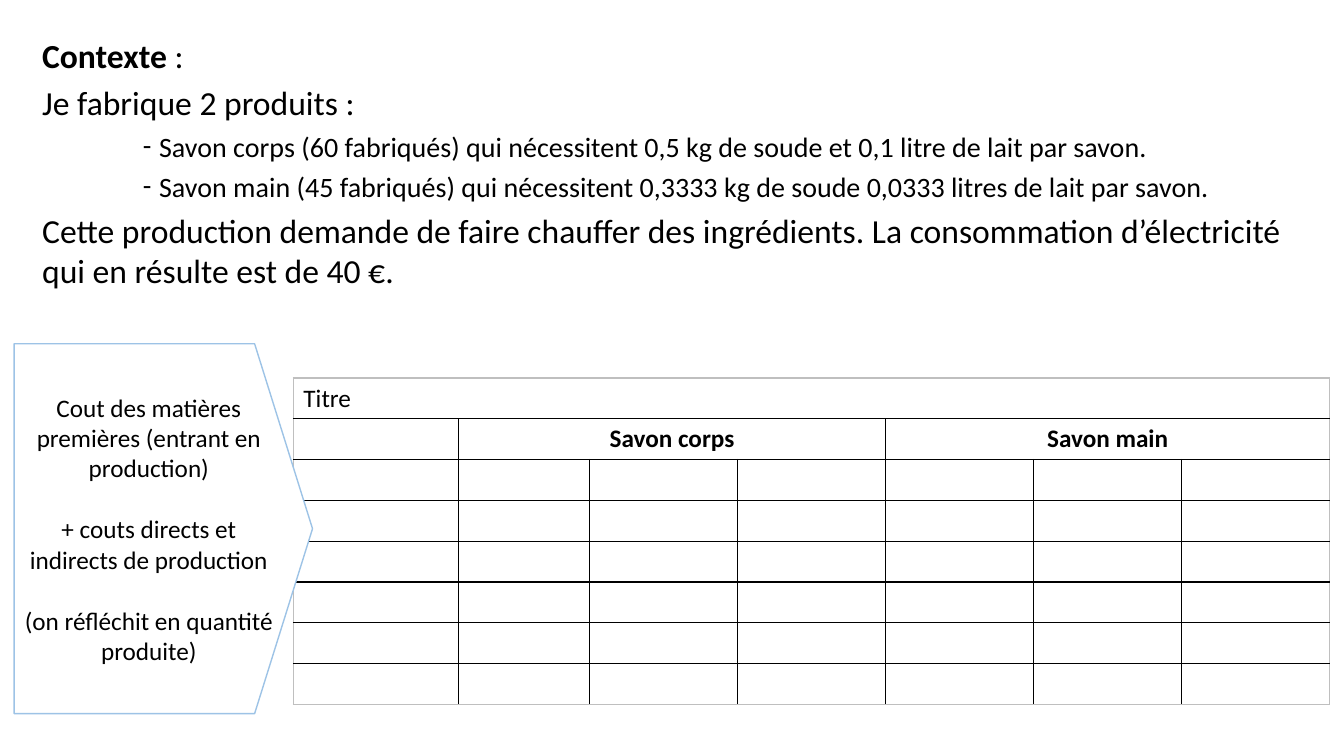
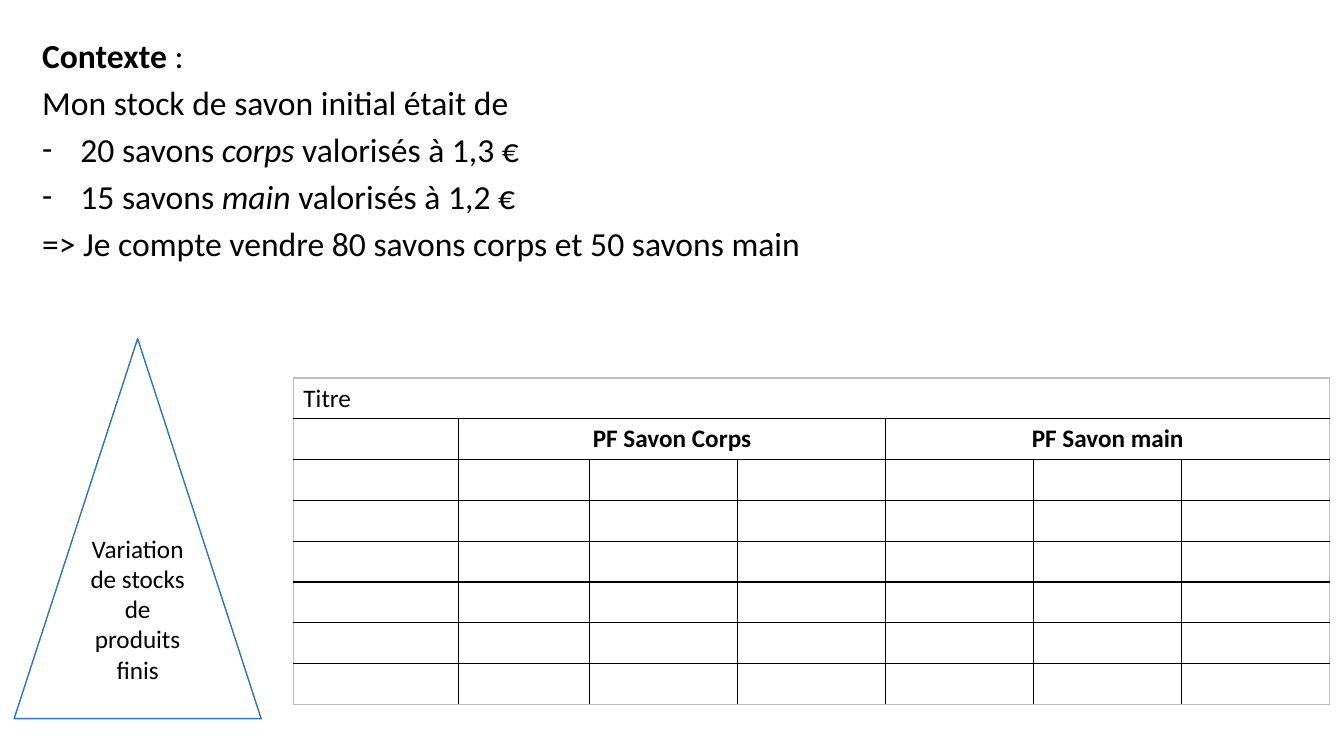
from dataclasses import dataclass

from lxml.etree import SubElement
from pptx import Presentation
from pptx.dml.color import RGBColor
from pptx.enum.shapes import MSO_SHAPE
from pptx.enum.text import MSO_ANCHOR, PP_ALIGN
from pptx.oxml.ns import qn
from pptx.util import Inches, Pt

SLIDE_WIDTH, SLIDE_HEIGHT = Inches(13.33), Inches(7.5)


@dataclass(frozen=True)
class Theme:
    font: str = "Calibri"
    text: str = "000000"
    paper: str = "FFFFFF"
    grid: str = "000000"
    frame: str = "BFBFBF"
    arrow: str = "9DC3E6"
    triangle: str = "2E75B6"
    body: int = 24
    detail: int = 20
    label: int = 18
    rule: float = 1
    body_gap: float = 4.8
    label_gap: float = 22


THEME = Theme()


@dataclass(frozen=True)
class Box:
    """A region in percent of the slide's width and height."""
    left: float
    top: float
    width: float
    height: float

    def place(self):
        across, down = SLIDE_WIDTH / 100, SLIDE_HEIGHT / 100
        return (int(self.left * across), int(self.top * down),
                int(self.width * across), int(self.height * down))


@dataclass(frozen=True)
class Line:
    """A context line: runs as (text, style), with a dash if hang is set."""
    runs: tuple
    size: int = THEME.body
    margin: float = 0
    hang: float = 0


CONTEXT_BOX = Box(2.4, 4, 95.25, 66)
TABLE_BOX = Box(21.83, 50, 77.12, 43.2)
ARROW_BOX = Box(1.05, 45.47, 22.2, 48.93)
TRIANGLE_BOX = Box(1.05, 44.8, 18.38, 50.27)

COLUMN_WEIGHTS = (1.64, 1.3) + (1.47,) * 5
ROW_COUNT = 8
PRODUCT_SPAN = 3


def rgb(value):
    return RGBColor.from_string(value)


def style_run(run, size, bold=False, italic=False):
    run.font.name = THEME.font
    run.font.size = Pt(size)
    run.font.color.rgb = rgb(THEME.text)
    run.font.bold = bold
    run.font.italic = italic


def paragraphs(frame, count):
    return [frame.paragraphs[0]] + [frame.add_paragraph() for _ in range(count - 1)]


def add_dash(paragraph, margin, hang):
    properties = paragraph._p.get_or_add_pPr()
    properties.set("marL", str(Inches(margin)))
    properties.set("indent", str(-Inches(hang)))
    SubElement(properties, qn("a:buFont"), typeface=THEME.font)
    SubElement(properties, qn("a:buChar"), char="-")


def add_context(slide, box, lines):
    frame = slide.shapes.add_textbox(*box.place()).text_frame
    frame.word_wrap = True
    heading = Line((("Contexte ", "bold"), (":", "")))
    lines = (heading,) + lines
    for paragraph, line in zip(paragraphs(frame, len(lines)), lines):
        paragraph.space_before = Pt(THEME.body_gap)
        if line.hang:
            add_dash(paragraph, line.margin, line.hang)
        for words, style in line.runs:
            run = paragraph.add_run()
            run.text = words
            style_run(run, line.size, style == "bold", style == "italic")


def draw_borders(cell, outer_sides):
    properties = cell._tc.get_or_add_tcPr()
    for side in "LRTB":
        border = SubElement(properties, qn(f"a:ln{side}"), w=str(Pt(THEME.rule)))
        fill = SubElement(border, qn("a:solidFill"))
        color = THEME.frame if side in outer_sides else THEME.grid
        SubElement(fill, qn("a:srgbClr"), val=color)


def write_cell(cell, words, bold=False, align=PP_ALIGN.LEFT):
    paragraph = cell.text_frame.paragraphs[0]
    paragraph.text = words
    paragraph.alignment = align
    style_run(paragraph.runs[0], THEME.label, bold)


def add_cost_table(slide, box, products):
    """Blank grid under a title row and one merged heading per product."""
    column_count = len(COLUMN_WEIGHTS)
    left, top, width, height = box.place()
    table = slide.shapes.add_table(ROW_COUNT, column_count, left, top, width, height).table
    table.first_row = table.horz_banding = False
    for column, weight in zip(table.columns, COLUMN_WEIGHTS):
        column.width = int(width * weight / sum(COLUMN_WEIGHTS))
    for row in table.rows:
        row.height = height // ROW_COUNT

    table.cell(0, 0).merge(table.cell(0, column_count - 1))
    write_cell(table.cell(0, 0), "Titre")
    for index, product in enumerate(products):
        first = 1 + index * PRODUCT_SPAN
        heading = table.cell(1, first)
        heading.merge(table.cell(1, first + PRODUCT_SPAN - 1))
        write_cell(heading, product, bold=True, align=PP_ALIGN.CENTER)

    for r in range(ROW_COUNT):
        for c in range(column_count):
            cell = table.cell(r, c)
            last = c + (cell.span_width if cell.is_merge_origin else 1)
            on_edge = {"L": c == 0, "R": last == column_count,
                       "T": r == 0, "B": r == ROW_COUNT - 1}
            draw_borders(cell, [side for side, outer in on_edge.items() if outer])
            cell.fill.background()


def add_label(slide, box, outline, color, texts):
    label = slide.shapes.add_shape(outline, *box.place())
    label.shadow.inherit = False
    label.fill.solid()
    label.fill.fore_color.rgb = rgb(THEME.paper)
    label.line.color.rgb = rgb(color)
    label.line.width = Pt(THEME.rule)
    frame = label.text_frame
    frame.word_wrap = True
    frame.vertical_anchor = MSO_ANCHOR.MIDDLE
    for index, paragraph in enumerate(paragraphs(frame, len(texts))):
        paragraph.text = texts[index]
        paragraph.alignment = PP_ALIGN.CENTER
        paragraph.space_before = Pt(THEME.label_gap if index else 0)
        style_run(paragraph.runs[0], THEME.label)
    return label


def plain(words):
    return Line(((words, ""),))


def product_need(words):
    return Line(((words, ""),), THEME.detail, margin=1.16, hang=0.16)


def stock_item(count, product, price):
    runs = ((f"{count} savons ", ""), (product, "italic"), (f" valorisés à {price} €", ""))
    return Line(runs, margin=0.38, hang=0.38)


def add_exercise(deck, context, products):
    slide = deck.slides.add_slide(deck.slide_layouts[6])
    add_context(slide, CONTEXT_BOX, context)
    add_cost_table(slide, TABLE_BOX, products)
    return slide


def add_production_cost(deck):
    slide = add_exercise(deck, (
        plain("Je fabrique 2 produits :"),
        product_need("Savon corps (60 fabriqués) qui nécessitent 0,5 kg de soude "
                     "et 0,1 litre de lait par savon."),
        product_need("Savon main (45 fabriqués) qui nécessitent 0,3333 kg de soude "
                     "0,0333 litres de lait par savon."),
        plain("Cette production demande de faire chauffer des ingrédients. "
              "La consommation d’électricité qui en résulte est de 40 €."),
    ), ("Savon corps", "Savon main"))
    arrow = add_label(slide, ARROW_BOX, MSO_SHAPE.PENTAGON, THEME.arrow, (
        "Cout des matières premières (entrant en production)",
        "+ couts directs et indirects de production",
        "(on réfléchit en quantité produite)",
    ))
    arrow.adjustments[0] = 0.194


def add_stock_variation(deck):
    slide = add_exercise(deck, (
        plain("Mon stock de savon initial était de"),
        stock_item(20, "corps", "1,3"),
        stock_item(15, "main", "1,2"),
        plain("=> Je compte vendre 80 savons corps et 50 savons main"),
    ), ("PF Savon Corps", "PF Savon main"))
    triangle = add_label(slide, TRIANGLE_BOX, MSO_SHAPE.ISOSCELES_TRIANGLE,
                         THEME.triangle, ("Variation de stocks de produits finis",))
    triangle.text_frame.margin_bottom = Inches(0.35)


def main():
    deck = Presentation()
    deck.slide_width, deck.slide_height = SLIDE_WIDTH, SLIDE_HEIGHT
    add_production_cost(deck)
    add_stock_variation(deck)
    deck.save("out.pptx")


if __name__ == "__main__":
    main()
